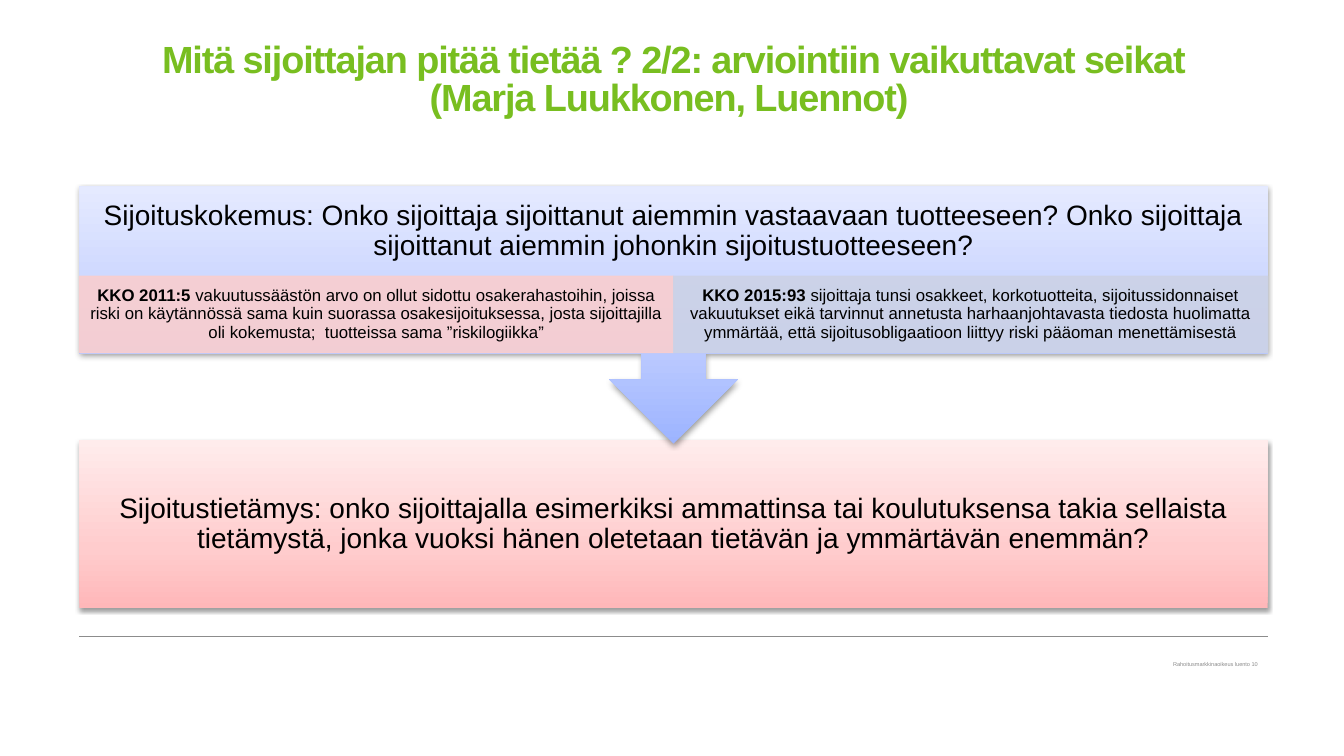
import copy
import pptx
import pptx.util
import pptx.dml.color
import pptx.enum.shapes
import pptx.enum.text
import pptx.oxml
import pptx.oxml.ns
from pptx.util import Cm

HUES = {
    "green": "78BE20", "gray": "8C8C8C", "black": "000000",
    "rose": "F9CECF", "mist": "CCD2E6",
    "blues": ["9DB4FF", "BAC9FF", "E5EAFF"],
    "reds": ["FFB7B9", "FFCCCD", "FFECEC"],
}
KIND = pptx.enum.shapes.MSO_SHAPE
ALIGN = pptx.enum.text.PP_ALIGN
MID = pptx.enum.text.MSO_ANCHOR.MIDDLE
SPACE = pptx.oxml.ns.nsdecls("a")
rgb = pptx.dml.color.RGBColor.from_string


def write(shape, runs, size, hue, pads, align=ALIGN.CENTER, anchor=MID, lead=0.9):
    frame = shape.text_frame
    left, top, right, base = [Cm(pad) for pad in pads]
    form = {
        "word_wrap": True, "auto_size": pptx.enum.text.MSO_AUTO_SIZE.NONE,
        "vertical_anchor": anchor, "margin_left": left, "margin_top": top,
        "margin_right": right, "margin_bottom": base,
    }
    for name, value in form.items():
        setattr(frame, name, value)
    para = frame.paragraphs[0]
    para.alignment = align
    para.line_spacing = lead
    for words, bold in runs:
        for turn, part in enumerate(words.split("\n")):
            if turn:
                para.add_line_break()
            run = para.add_run()
            run.text = part
            look = {"name": "Arial", "size": pptx.util.Pt(size), "bold": bold}
            for name, value in look.items():
                setattr(run.font, name, value)
            run.font.color.rgb = rgb(HUES[hue])


deck = pptx.Presentation()
deck.slide_width = Cm(33.87)
deck.slide_height = Cm(19.05)
slide = deck.slides.add_slide(deck.slide_layouts[5])
shapes = slide.shapes
LEFT, WIDE = 2, 29.95

title = shapes.title
place = {"left": LEFT, "top": 1.07, "width": WIDE, "height": 3.33}
for name, value in place.items():
    setattr(title, name, Cm(value))
write(title, [("Mitä sijoittajan pitää tietää ? 2/2: arviointiin vaikuttavat seikat\n"
               "(Marja Luukkonen, Luennot) ", True)],
      27, "green", [0] * 4, anchor=pptx.enum.text.MSO_ANCHOR.TOP, lead=0.85)
for run in title.text_frame.paragraphs[0].runs:
    run.font._element.set("spc", "-80")

rule = shapes.add_connector(pptx.enum.shapes.MSO_CONNECTOR.STRAIGHT,
                            Cm(LEFT), Cm(16.03), Cm(LEFT + WIDE), Cm(16.03))
rule.line.color.rgb = rgb(HUES["gray"])
rule.line.width = pptx.util.Pt(0.75)
rule._element.spPr.append(pptx.oxml.parse_xml(f"<a:effectLst {SPACE}/>"))

foot = shapes.add_textbox(Cm(18.29), Cm(16.54), Cm(13.41), Cm(0.43))
write(foot, [("Rahoitusmarkkinaoikeus luento 10", False)], 4, "gray",
      [0.25, 0.13, 0, 0.13], align=ALIGN.RIGHT)

PANELS = [
    (KIND.RECTANGLE, 11.1, 4.22, "reds", 0.41,
     "Sijoitustietämys: onko sijoittajalla esimerkiksi ammattinsa tai koulutuksensa takia "
     "sellaista tietämystä, jonka vuoksi hänen oletetaan tietävän ja ymmärtävän enemmän?"),
    (KIND.DOWN_ARROW_CALLOUT, 4.7, 6.48, "blues", 2.34,
     "Sijoituskokemus: Onko sijoittaja sijoittanut aiemmin vastaavaan tuotteeseen? "
     "Onko sijoittaja sijoittanut aiemmin johonkin sijoitustuotteeseen?"),
]
for kind, top, high, hues, base, words in PANELS:
    panel = shapes.add_shape(kind, Cm(LEFT), Cm(top), Cm(WIDE), Cm(high))
    panel.line.fill.background()
    panel.fill.gradient()
    panel.fill.gradient_angle = 90
    stops = panel._element.spPr.find(".//" + pptx.oxml.ns.qn("a:gsLst"))
    stops.insert(1, copy.deepcopy(stops[0]))
    for stop, spot, hue in zip(panel.fill.gradient_stops, [0, 0.35, 1], HUES[hues]):
        stop.position = spot
        stop.color.rgb = rgb(hue)
    panel.shadow.inherit = False
    glow = panel._element.spPr.find(pptx.oxml.ns.qn("a:effectLst"))
    glow.append(pptx.oxml.parse_xml(
        f'<a:outerShdw {SPACE} blurRad="40000" dist="20000" dir="5400000" rotWithShape="0">'
        '<a:srgbClr val="000000"><a:alpha val="38000"/></a:srgbClr></a:outerShdw>'))
    write(panel, [(words, False)], 20, "black", [0.41, 0.41, 0.41, base])

CASES = [
    ("rose", "KKO 2011:5 ",
     "vakuutussäästön arvo on ollut sidottu osakerahastoihin, joissa riski on käytännössä "
     "sama kuin suorassa osakesijoituksessa, josta sijoittajilla oli kokemusta;  "
     "tuotteissa sama ”riskilogiikka”"),
    ("mist", "KKO 2015:93 ",
     "sijoittaja tunsi osakkeet, korkotuotteita, sijoitussidonnaiset vakuutukset eikä "
     "tarvinnut annetusta harhaanjohtavasta tiedosta huolimatta ymmärtää, että "
     "sijoitusobligaatioon liittyy riski pääoman menettämisestä"),
]
for spot, (hue, case, words) in enumerate(CASES):
    half = WIDE / 2
    card = shapes.add_shape(KIND.RECTANGLE, Cm(LEFT + spot * half), Cm(6.96),
                            Cm(half), Cm(1.93))
    card.shadow.inherit = False
    card.line.width = pptx.util.Pt(0.75)
    for fill in (card.fill, card.line.fill):
        fill.solid()
        fill.fore_color.rgb = rgb(HUES[hue])
    for tint in card._element.spPr.iter(pptx.oxml.ns.qn("a:srgbClr")):
        tint.append(pptx.oxml.parse_xml(f'<a:alpha {SPACE} val="90000"/>'))
    write(card, [(case, True), (words, False)], 12, "black", [0.23, 0.05, 0.23, 0.05])

deck.save("out.pptx")
